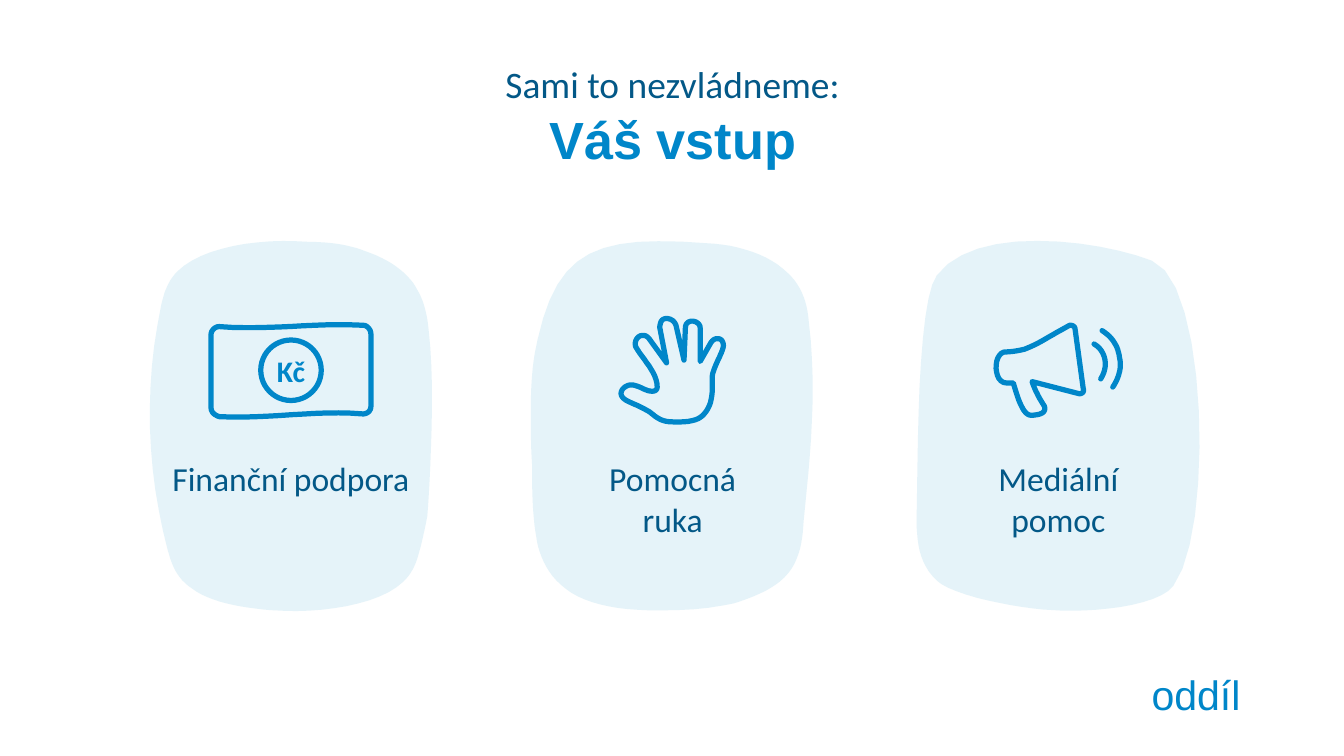
from lxml import etree
from pptx import Presentation
from pptx.dml.color import RGBColor
from pptx.enum.shapes import MSO_SHAPE
from pptx.enum.text import MSO_ANCHOR, PP_ALIGN
from pptx.oxml.ns import qn
from pptx.util import Inches, Pt

OVAL = MSO_SHAPE.OVAL
MIDDLE, TOP = MSO_ANCHOR.MIDDLE, MSO_ANCHOR.TOP
CENTER = PP_ALIGN.CENTER
BLUE, NAVY, PALE = "0086C9", "035887", "E5F3F9"
UNITS = 1000
STROKE = 2.8
CARD_LEFTS = (1.11, 3.95, 6.82)
CARD_TOP = 1.79

BLOB_LEFT = [
    (.32, 2.59), (.2, 2.51, .17, 2.41, .14, 2.31), (-.02, 1.71, -.04, 1.09, .09, .48),
    (.11, .4, .13, .31, .21, .23), (.39, .05, .81, -.02, 1.19, .01),
    (1.33, .01, 1.49, .03, 1.61, .08), (1.79, .14, 1.92, .24, 1.98, .34),
    (2.05, .45, 2.07, .56, 2.08, .67), (2.14, 1.14, 2.07, 2.05, 2.07, 2.05),
    (2.05, 2.15, 2.03, 2.25, 2, 2.35), (1.98, 2.42, 1.95, 2.48, 1.89, 2.54),
    (1.71, 2.71, 1.28, 2.78, .9, 2.75), (.68, 2.73, .45, 2.69, .32, 2.59)]
BLOB_MIDDLE = [
    (1.06, 2.75), (1.21, 2.75, 1.37, 2.73, 1.51, 2.7), (1.64, 2.66, 1.76, 2.61, 1.85, 2.54),
    (2, 2.42, 2.02, 2.25, 2.03, 2.09), (2.08, 1.6, 2.13, 1.11, 2.07, .62),
    (2.06, .49, 2.03, .35, 1.91, .24), (1.78, .11, 1.55, .03, 1.31, .02),
    (.51, -.04, .2, .05, .05, .74), (.01, .91, 0, 1.08, 0, 1.26),
    (0, 1.4, 0, 1.54, .01, 1.68), (.01, 1.85, .01, 2.03, .04, 2.2),
    (.06, 2.35, .13, 2.51, .3, 2.62), (.49, 2.74, .79, 2.76, 1.06, 2.75)]
BLOB_RIGHT = [
    (1.75, .15), (2.17, .3, 2.21, 2.18, 1.91, 2.57), (1.79, 2.73, 1.27, 2.77, 1.01, 2.75),
    (.76, 2.74, .26, 2.64, .15, 2.53), (.01, 2.4, 0, 2.22, 0, 2.06),
    (.01, 1.67, 0, .46, .15, .26), (.43, -.12, 1.33, -.01, 1.75, .15)]
BANKNOTE = [
    (1.59, .63), (1.62, .63, 1.65, .66, 1.65, .7), (1.65, 1.23),
    (1.65, 1.27, 1.62, 1.29, 1.59, 1.29), (1.23, 1.26, .88, 1.33, .52, 1.31),
    (.49, 1.3, .46, 1.28, .46, 1.24), (.46, .7), (.46, .67, .49, .64, .52, .64),
    (.88, .67, 1.23, .61, 1.59, .63)]
HAND = [
    (.96, .65), (.96, .6, .98, .58, 1.01, .58), (1.04, .58, 1.07, .6, 1.08, .63),
    (1.14, .89), (1.15, .65), (1.15, .62, 1.17, .6, 1.2, .6),
    (1.23, .6, 1.26, .62, 1.26, .65), (1.26, .9), (1.34, .76),
    (1.36, .73, 1.38, .73, 1.39, .73), (1.42, .73, 1.44, .76, 1.43, .8),
    (1.41, .87, 1.36, .94, 1.35, 1.01), (1.35, 1.11, 1.36, 1.21, 1.29, 1.29),
    (1.24, 1.35, 1.15, 1.35, 1.07, 1.35), (.97, 1.35, .94, 1.32, .89, 1.28),
    (.83, 1.24, .77, 1.22, .71, 1.19), (.66, 1.16, .66, 1.12, .7, 1.09),
    (.74, 1.06, .79, 1.08, .83, 1.1), (.89, 1.13, .94, 1.13, .94, 1.09),
    (.94, .98, .83, .88, .78, .79), (.76, .73, .83, .67, .88, .73), (1.01, .91)]
MEGAPHONE = [
    (1.14, .63), (1.16, .63, 1.18, .64, 1.18, .66), (1.24, 1.1),
    (1.25, 1.13, 1.23, 1.14, 1.21, 1.14), (.86, 1.05), (.88, 1.11, .91, 1.17, .95, 1.23),
    (.97, 1.28, .92, 1.3, .85, 1.3), (.79, 1.3, .75, 1.16, .72, 1.06), (.67, 1.06),
    (.57, 1.06, .57, .85, .65, .83), (.69, .83, .76, .82, .8, .81),
    (.89, .78, 1.01, .7, 1.14, .63)]
WAVES = [
    [(1.32, .77), (1.41, .82, 1.43, .94, 1.37, 1.03)],
    [(1.38, .67), (1.46, .72, 1.5, .79, 1.51, .87), (1.53, .95, 1.5, 1.03, 1.46, 1.09)]]


def rgb(color):
    """Turn a hex string into a colour."""
    return RGBColor.from_string(color)


def write(s, lines, size=18, font="Calibri", color=NAVY, bold=False, anchor=TOP,
          margins=(.1, .05), wrap=True):
    """Write centred lines, each a string or a (string, format) pair."""
    tf = s.text_frame
    tf.word_wrap = wrap
    tf.vertical_anchor = anchor
    tf.margin_left = tf.margin_right = Inches(margins[0])
    tf.margin_top = tf.margin_bottom = Inches(margins[1])
    for i, line in enumerate(lines):
        text, own = (line, {}) if isinstance(line, str) else line
        p = tf.paragraphs[0] if i == 0 else tf.add_paragraph()
        p.alignment = CENTER
        p.line_spacing = 1.0
        p.space_before = Pt(own.get("before", 0))
        r = p.add_run()
        r.text = text
        r.font.size = Pt(own.get("size", size))
        r.font.name = own.get("font", font)
        r.font.bold = own.get("bold", bold)
        r.font.color.rgb = rgb(own.get("color", color))


def paint(s, fill=None, line=None):
    """Give a shape a fill or a round-ended stroke, without shadow."""
    s.shadow.inherit = False
    if fill:
        s.fill.solid()
        s.fill.fore_color.rgb = rgb(fill)
    else:
        s.fill.background()
    if line:
        s.line.color.rgb = rgb(line)
        s.line.width = Pt(STROKE)
        ln = s._element.spPr.find(qn("a:ln"))
        ln.set("cap", "rnd")
        etree.SubElement(ln, qn("a:round"))
    else:
        s.line.fill.background()


def flatten(outline, steps=12):
    """Turn line and cubic curve segments into points."""
    points = [outline[0]]
    for seg in outline[1:]:
        if len(seg) == 2:
            points.append(seg)
            continue
        ends = (points[-1], seg[:2], seg[2:4], seg[4:])
        for i in range(1, steps + 1):
            t = i / steps
            weights = ((1 - t) ** 3, 3 * t * (1 - t) ** 2, 3 * t * t * (1 - t), t ** 3)
            points.append(tuple(sum(w * e[k] for w, e in zip(weights, ends)) for k in (0, 1)))
    return [(x * UNITS, y * UNITS) for x, y in points]


def draw(slide, x, y, outline, closed=True, **colors):
    """Draw an outline relative to the point x, y."""
    points = flatten(outline)
    fb = slide.shapes.build_freeform(*points[0], scale=Inches(1) / UNITS)
    fb.add_line_segments(points[1:], close=closed)
    paint(fb.convert_to_shape(Inches(x), Inches(y)), **colors)


def text_box(slide, x, y, w, h, lines, **fmt):
    """Add a text box."""
    s = slide.shapes.add_textbox(Inches(x), Inches(y), Inches(w), Inches(h))
    write(s, lines, **fmt)


def money_icon(slide, x, y):
    """Draw a banknote with a coin."""
    draw(slide, x, y, BANKNOTE, line=BLUE)
    s = slide.shapes.add_shape(OVAL, Inches(x + .83), Inches(y + .74), Inches(.45), Inches(.45))
    paint(s, line=BLUE)
    write(s, ["Kč"], size=16, color=BLUE, bold=True, anchor=MIDDLE, margins=(0, 0), wrap=False)


def hand_icon(slide, x, y):
    """Draw an open hand."""
    draw(slide, x, y, HAND, line=BLUE)


def megaphone_icon(slide, x, y):
    """Draw a megaphone with sound waves."""
    draw(slide, x, y, MEGAPHONE, line=BLUE)
    for wave in WAVES:
        draw(slide, x, y, wave, closed=False, line=BLUE)


def card(slide, x, y, blob, icon, lines):
    """Place a blob with its icon and label."""
    draw(slide, x, y, blob, fill=PALE)
    icon(slide, x, y)
    text_box(slide, x + .03, y + 1.57, 2.05, .71, lines)


def heading(slide, x, y, w, h):
    """Place the two-line title."""
    s = slide.shapes.title
    s.left, s.top, s.width, s.height = (Inches(v) for v in (x, y, w, h))
    big = {"size": 28, "font": "Arial", "color": BLUE, "bold": True, "before": .9}
    write(s, ["Sami to nezvládneme:", ("Váš vstup", big)], size=20, anchor=MIDDLE, margins=(0, 0))


def main():
    """Build the slide."""
    prs = Presentation()
    prs.slide_width = Inches(10)
    prs.slide_height = prs.slide_width * 9 // 16
    slide = prs.slides.add_slide(prs.slide_layouts[5])
    heading(slide, 2.77, .44, 4.47, .84)
    cards = [(BLOB_LEFT, money_icon, ["Finanční podpora"]),
             (BLOB_MIDDLE, hand_icon, ["Pomocná", "ruka"]),
             (BLOB_RIGHT, megaphone_icon, ["Mediální", "pomoc"])]
    for x, parts in zip(CARD_LEFTS, cards):
        card(slide, x, CARD_TOP, *parts)
    text_box(slide, 8.15, 4.93, 1.5, .47, ["oddíl"], size=22, font="Arial", color=BLUE)
    prs.save("out.pptx")


if __name__ == "__main__":
    main()
